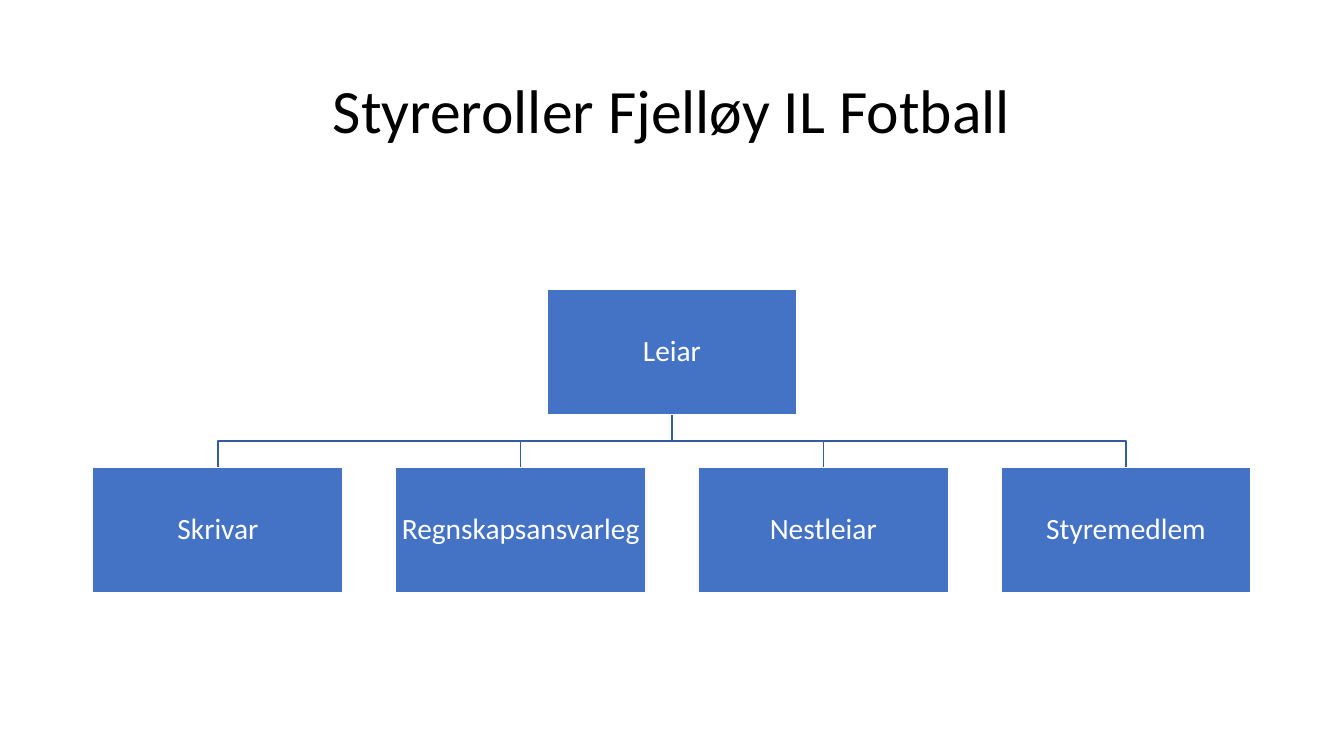
"""Build an organisation chart slide of the board roles in a football club."""
from pptx import Presentation
from pptx.dml.color import RGBColor
from pptx.enum.shapes import MSO_SHAPE as SHAPE
from pptx.enum.text import MSO_ANCHOR as ANCHOR, PP_ALIGN as ALIGN
from pptx.util import Pt

BLACK = RGBColor(0x00, 0x00, 0x00)
WHITE = RGBColor(0xFF, 0xFF, 0xFF)
BLUE = RGBColor(0x44, 0x72, 0xC4)
DARK_BLUE = RGBColor(0x36, 0x5B, 0x9D)

SLIDE_W, SLIDE_H = 960, 540
CENTER = SLIDE_W / 2
BOX_W, BOX_H = 178.8, 89.4
PITCH = 216.2
LEADER_TOP, MEMBER_TOP = 206.8, 334.1
MEMBERS = ["Skrivar", "Regnskapsansvarleg", "Nestleiar", "Styremedlem"]


def apply(target, values):
    """Set each attribute in values on target."""
    for name, value in values.items():
        setattr(target, name, value)


def set_text(s, text, size, color, margins=None):
    """Write one centred paragraph into a shape."""
    tf = s.text_frame
    apply(tf, {"word_wrap": True, "vertical_anchor": ANCHOR.MIDDLE} | (margins or {}))
    p = tf.paragraphs[0]
    apply(p, {"alignment": ALIGN.CENTER, "line_spacing": 0.9})
    r = p.add_run()
    r.text = text
    apply(r.font, {"name": "Calibri", "size": Pt(size)})
    r.font.color.rgb = color


def set_line(s, color):
    """Give a shape a thin line and no shadow."""
    s.shadow.inherit = False
    s.line.color.rgb = color
    s.line.width = Pt(1)


def add_title(slide, text):
    """Add the slide title."""
    s = slide.shapes.add_textbox(Pt(66), Pt(28.75), Pt(828), Pt(104.4))
    set_text(s, text, 44, BLACK)


def add_role(slide, text, center, top):
    """Add a role box centred on a horizontal position."""
    s = slide.shapes.add_shape(
        SHAPE.RECTANGLE, Pt(center - BOX_W / 2), Pt(top), Pt(BOX_W), Pt(BOX_H))
    s.fill.solid()
    s.fill.fore_color.rgb = BLUE
    set_line(s, WHITE)
    sides = ("left", "top", "right", "bottom")
    set_text(s, text, 21, WHITE, {f"margin_{side}": Pt(1) for side in sides})


def add_branch(slide, center):
    """Add the elbow line from the leader down to a member."""
    top = LEADER_TOP + BOX_H
    middle = (top + MEMBER_TOP) / 2
    builder = slide.shapes.build_freeform(Pt(CENTER), Pt(top))
    points = [(CENTER, middle), (center, middle), (center, MEMBER_TOP)]
    builder.add_line_segments([(Pt(x), Pt(y)) for x, y in points], close=False)
    s = builder.convert_to_shape()
    s.fill.background()
    set_line(s, DARK_BLUE)


def main():
    """Build and save the slide."""
    prs = Presentation()
    apply(prs, {"slide_width": Pt(SLIDE_W), "slide_height": Pt(SLIDE_H)})
    slide = prs.slides.add_slide(prs.slide_layouts[6])
    add_title(slide, "Styreroller Fjelløy IL Fotball")
    first = CENTER - PITCH * (len(MEMBERS) - 1) / 2
    centers = [first + i * PITCH for i in range(len(MEMBERS))]
    for center in reversed(centers):
        add_branch(slide, center)
    add_role(slide, "Leiar", CENTER, LEADER_TOP)
    for text, center in zip(MEMBERS, centers):
        add_role(slide, text, center, MEMBER_TOP)
    prs.save("out.pptx")


if __name__ == "__main__":
    main()
